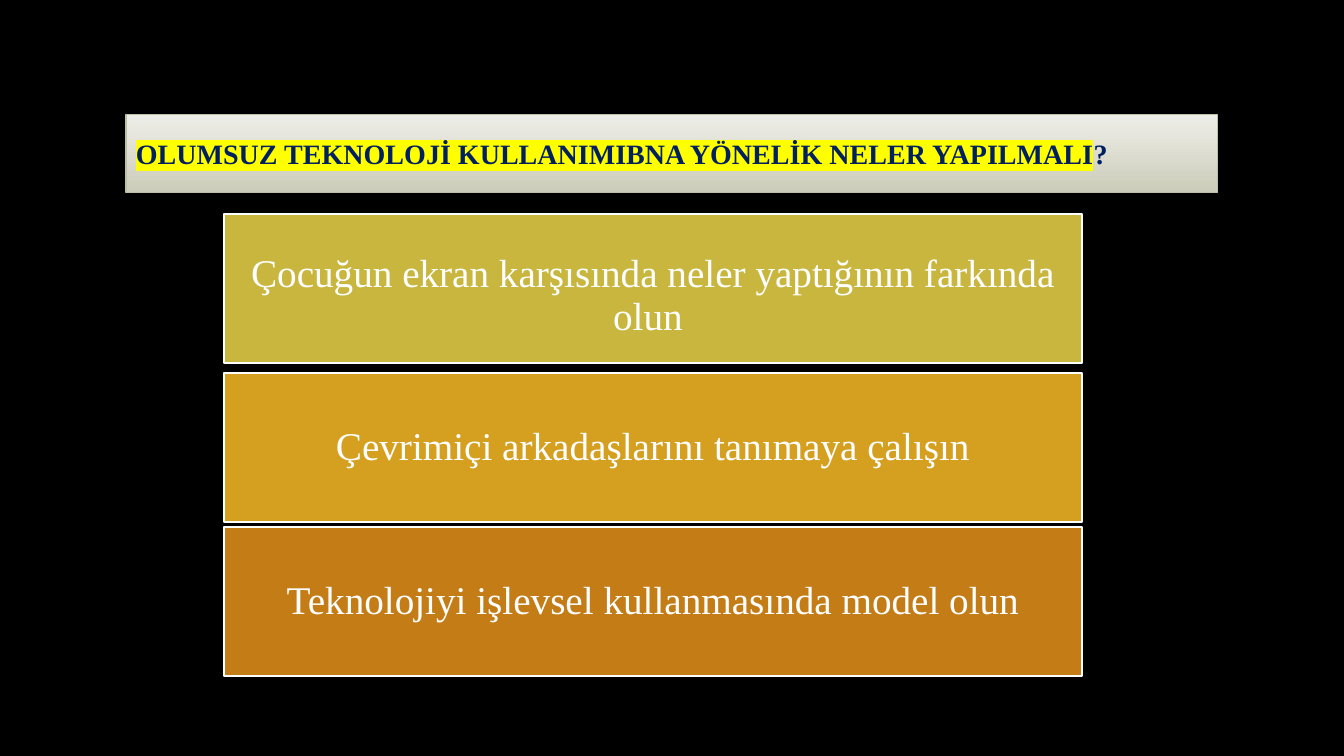
from dataclasses import dataclass

from pptx import Presentation
from pptx.dml.color import RGBColor as Rgb
from pptx.enum.shapes import MSO_SHAPE as Shape
from pptx.enum.text import MSO_ANCHOR as Anchor, PP_ALIGN as Align
from pptx.oxml import parse_xml
from pptx.oxml.ns import qn
from pptx.util import Inches, Pt

# Content: title runs (text, highlighted) and cards (text, fill, top, extra top inset)
TITLE = [
    ("OLUMSUZ TEKNOLOJİ KULLANIMIBNA YÖNELİK NELER YAPILMALI", True),
    ("?", False),
]
CARDS = [
    ("Çocuğun ekran karşısında neler yaptığının farkında olun ", "C9B63F", 2.12, 0.16),
    ("Çevrimiçi arkadaşlarını tanımaya çalışın", "D59F20", 3.7, 0),
    ("Teknolojiyi işlevsel kullanmasında model olun", "C47C16", 5.23, 0),
]


@dataclass(frozen=True)
class Theme:
    font: str = "Times New Roman"
    background: str = "000000"
    title_ink: str = "002060"
    title_light: str = "EEEEE8"
    title_dark: str = "CCCCBA"
    title_line: str = "BFBFA5"
    highlight: str = "FFFF00"
    card_ink: str = "FFFFFF"
    title_size: int = 20
    card_size: int = 28


THEME = Theme()
DRAWING = 'xmlns:a="http://schemas.openxmlformats.org/drawingml/2006/main"'
CARD_LEFT, CARD_WIDTH, CARD_HEIGHT, CARD_INSET = 2.22, 8.51, 1.48, 0.08


def color(value):
    return Rgb.from_string(value)


def add_box(page, left, top, width, height, line, line_width):
    box = page.shapes.add_shape(
        Shape.RECTANGLE, Inches(left), Inches(top), Inches(width), Inches(height))
    box.shadow.inherit = False
    box.line.color.rgb = color(line)
    box.line.width = Pt(line_width)
    box.text_frame.word_wrap = True
    box.text_frame.vertical_anchor = Anchor.MIDDLE
    return box


def add_span(para, text, size, ink, bold=False):
    span = para.add_run()
    span.text = text
    span.font.name = THEME.font
    span.font.size = Pt(size)
    span.font.bold = bold
    span.font.color.rgb = color(ink)
    return span


def add_text_effects(span, highlighted):
    fill = span.font._element.find(qn("a:solidFill"))
    if highlighted:
        fill.addnext(parse_xml(
            f'<a:highlight {DRAWING}><a:srgbClr val="{THEME.highlight}"/></a:highlight>'))
    fill.addnext(parse_xml(
        f'<a:effectLst {DRAWING}><a:outerShdw blurRad="38100" dist="38100" dir="2700000">'
        '<a:srgbClr val="000000"><a:alpha val="43000"/></a:srgbClr>'
        '</a:outerShdw></a:effectLst>'))


def add_title(page):
    box = add_box(page, 1.25, 1.14, 10.83, 0.77, THEME.title_line, 0.75)
    box.fill.gradient()
    box.fill.gradient_angle = 270
    stops = zip(box.fill.gradient_stops, (THEME.title_light, THEME.title_dark), (0, 1))
    for stop, shade, position in stops:
        stop.color.rgb = color(shade)
        stop.position = position
    para = box.text_frame.paragraphs[0]
    para.alignment = Align.LEFT
    for text, highlighted in TITLE:
        span = add_span(para, text, THEME.title_size, THEME.title_ink, bold=True)
        add_text_effects(span, highlighted)


def add_card(page, text, fill, top, extra_inset):
    box = add_box(page, CARD_LEFT, top, CARD_WIDTH, CARD_HEIGHT, THEME.card_ink, 1.5)
    box.fill.solid()
    box.fill.fore_color.rgb = color(fill)
    frame = box.text_frame
    frame.margin_left = frame.margin_right = frame.margin_bottom = Inches(CARD_INSET)
    frame.margin_top = Inches(CARD_INSET + extra_inset)
    para = frame.paragraphs[0]
    para.alignment = Align.CENTER
    para.line_spacing = 0.9
    add_span(para, text, THEME.card_size, THEME.card_ink)


def main():
    deck = Presentation()
    deck.slide_width, deck.slide_height = Inches(13.33), Inches(7.5)
    page = deck.slides.add_slide(deck.slide_layouts[6])
    page.background.fill.solid()
    page.background.fill.fore_color.rgb = color(THEME.background)

    # Title bar, then the stacked advice cards
    add_title(page)
    for card in CARDS:
        add_card(page, *card)
    deck.save("out.pptx")


if __name__ == "__main__":
    main()
